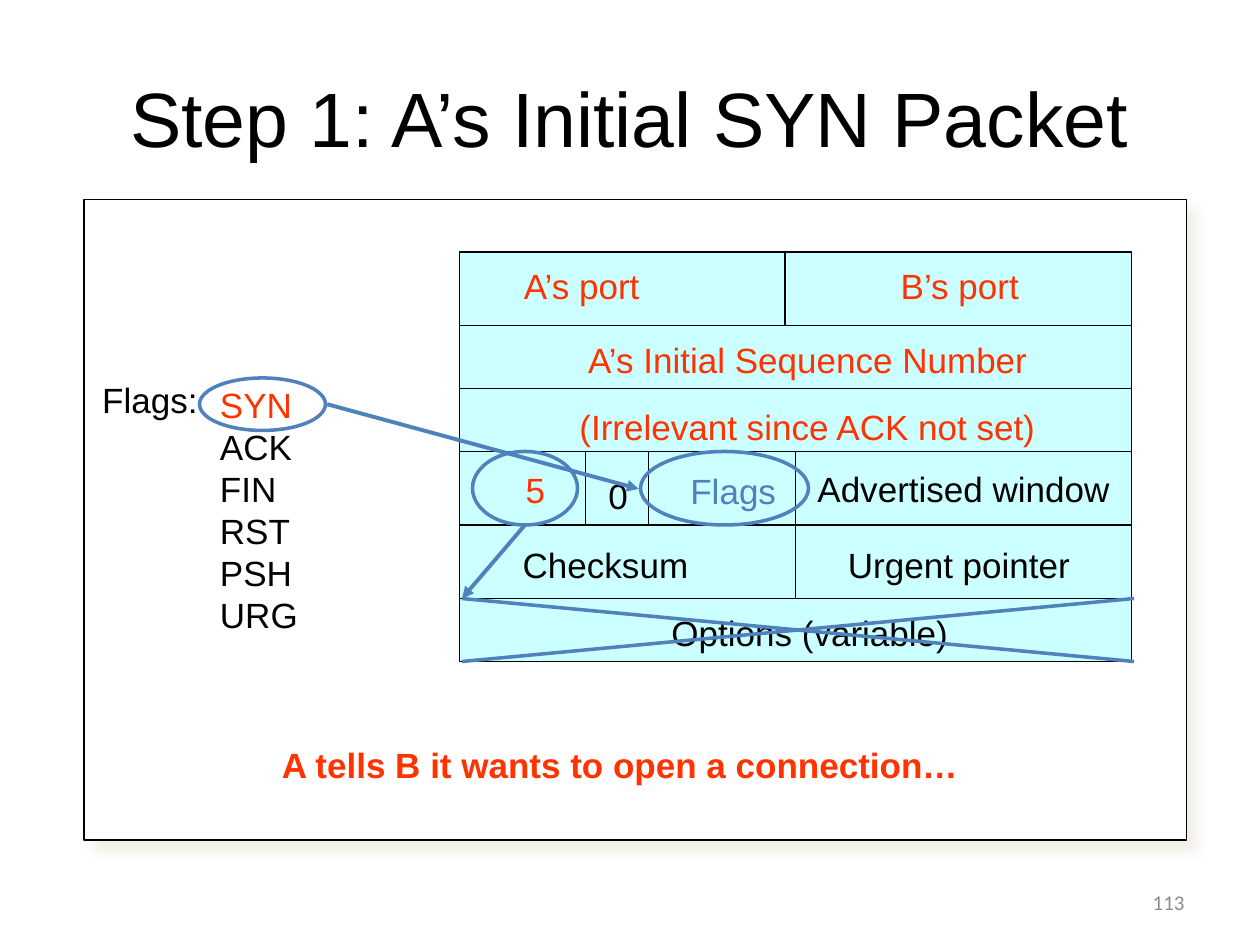
from lxml.etree import SubElement
from pptx import Presentation
from pptx.dml.color import RGBColor
from pptx.enum.shapes import MSO_CONNECTOR as CONN, MSO_SHAPE as SHAPE
from pptx.enum.text import MSO_ANCHOR as ANCHOR, MSO_AUTO_SIZE as SIZE, PP_ALIGN as ALIGN
from pptx.oxml.ns import qn
from pptx.util import Pt

COLORS = {
    "black": "000000", "white": "FFFFFF", "cell": "CCFFFF", "red": "FF3300",
    "blue": "4F81BD", "shadow": "EEECE1", "gray": "8C8C8C",
}


def rgb(name):
    return RGBColor.from_string(COLORS[name])


class Deck:
    font = {"name": "Arial", "size": Pt(20), "bold": False}

    def __init__(self, width, height):
        self.prs = Presentation()
        self.prs.slide_width, self.prs.slide_height = Pt(width), Pt(height)
        self.s = None

    def add_slide(self):
        self.s = self.prs.slides.add_slide(self.prs.slide_layouts[6])

    def shape(self, kind, box, fill=None, line="black", weight=0.75):
        sp = self.s.shapes.add_shape(kind, *map(Pt, box))
        sp.shadow.inherit = False
        if fill:
            sp.fill.solid()
            sp.fill.fore_color.rgb = rgb(fill)
        else:
            sp.fill.background()
        sp.line.color.rgb = rgb(line)
        sp.line.width = Pt(weight)
        return sp

    def panel(self, box):
        sp = self.shape(SHAPE.RECTANGLE, box, "white")
        effects = sp._element.spPr.find(qn("a:effectLst"))
        shadow = SubElement(effects, qn("a:outerShdw"), blurRad=str(Pt(5)),
                            dist=str(Pt(8.5)), dir="2700000", algn="tl", rotWithShape="0")
        color = SubElement(shadow, qn("a:srgbClr"), val=COLORS["shadow"])
        SubElement(color, qn("a:alpha"), val="75000")

    def cell(self, x, y, w, h):
        self.shape(SHAPE.RECTANGLE, (x, y, w, h), "cell")

    def ring(self, x, y, w, h):
        self.shape(SHAPE.OVAL, (x, y, w, h), line="blue", weight=2)

    def text(self, box, lines, color="black", fill=None, align=ALIGN.LEFT,
             anchor=ANCHOR.TOP, **font):
        sp = self.s.shapes.add_textbox(*map(Pt, box))
        if fill:
            sp.fill.solid()
            sp.fill.fore_color.rgb = rgb(fill)
        tf = sp.text_frame
        frame = {"word_wrap": True, "vertical_anchor": anchor, "auto_size": SIZE.NONE,
                 "margin_right": Pt(0 if align == ALIGN.LEFT else 7.2)}
        for key, value in frame.items():
            setattr(tf, key, value)
        tf.text = "\n".join(lines)
        for p in tf.paragraphs:
            p.alignment = align
            for r in p.runs:
                for key, value in {**self.font, **font}.items():
                    setattr(r.font, key, value)
                r.font.color.rgb = rgb(color)
        return tf

    def label(self, x, y, w, text, color="black"):
        self.text((x, y, w, 31), [text], color, fill="cell")

    def line(self, x1, y1, x2, y2, color="blue", weight=2.0, arrow=False):
        c = self.s.shapes.add_connector(CONN.STRAIGHT, *map(Pt, (x1, y1, x2, y2)))
        c.line.color.rgb = rgb(color)
        c.line.width = Pt(weight)
        if arrow:
            SubElement(c.line._get_or_add_ln(), qn("a:tailEnd"), type="triangle")
        SubElement(c._element.spPr, qn("a:effectLst"))


def main():
    deck = Deck(720, 540)
    deck.add_slide()
    title = deck.text((36, 21.6, 648, 90), ["Step 1: A’s Initial SYN Packet"],
                      align=ALIGN.CENTER, anchor=ANCHOR.MIDDLE, size=Pt(44))
    title.paragraphs[0].runs[0]._r.get_or_add_rPr().set("kern", "0")
    deck.panel((48, 114, 630, 366))

    left, width, half = 262.6, 384, 192
    rows = [
        (42, [186, 198], [(292.3, 3.6, 83.5, "A’s port", "red"),
                          (507.6, 3.6, 82, "B’s port", "red")]),
        (36, [width], [(329, 3.8, 270, "A’s Initial Sequence Number", "red")]),
        (36, [width], [(324, 6.3, 276, "(Irrelevant since ACK not set)", "red")]),
        (42, [half, half], [(460, 5.5, 181.5, "Advertised window", "black"),
                            (387.4, 7, 63.4, "Flags", "blue"),
                            (340.6, 9.6, 26, "0", "black")]),
        (42, [half, half], [(291.6, 6.8, 112, "Checksum", "black"),
                            (477.4, 6.8, 145, "Urgent pointer", "black")]),
        (36, [width], [(376.6, 3.8, 176, "Options (variable)", "black")]),
    ]
    y = 144
    for height, widths, labels in rows:
        x = left
        for w in widths:
            deck.cell(x, y, w, height)
            x += w
        for lx, dy, w, text, color in labels:
            deck.label(lx, y + dy, w, text, color)
        y += height

    deck.text((264, 264, 84, 31), ["5"], "red", align=ALIGN.CENTER)
    for x in (334.6, 370.6):
        deck.line(x, 258, x, 300, "black", 0.75)

    deck.text((51.3, 213, 72, 31), ["Flags:"])
    flags = deck.text((118.6, 215.6, 64, 151), ["SYN", "ACK", "FIN", "RST", "PSH", "URG"])
    flags.paragraphs[0].runs[0].font.color.rgb = rgb("red")
    deck.text((134.4, 421.2, 440, 31), ["A tells B it wants to open a connection…"], "red",
              align=ALIGN.CENTER, bold=True)

    for ring in ((366, 258, 96, 42), (114, 216, 72, 30), (270, 258, 60, 42)):
        deck.ring(*ring)
    deck.line(187, 231, 365, 279.4, weight=2.25, arrow=True)
    for start, end in ((342, 378), (378, 342)):
        deck.line(264, start, 648, end)
    deck.line(300, 300, 264, 342, weight=2.25, arrow=True)

    deck.text((516, 501, 168, 29), ["113"], "gray", align=ALIGN.RIGHT,
              anchor=ANCHOR.MIDDLE, name="Calibri", size=Pt(12))
    deck.prs.save("out.pptx")


if __name__ == "__main__":
    main()
